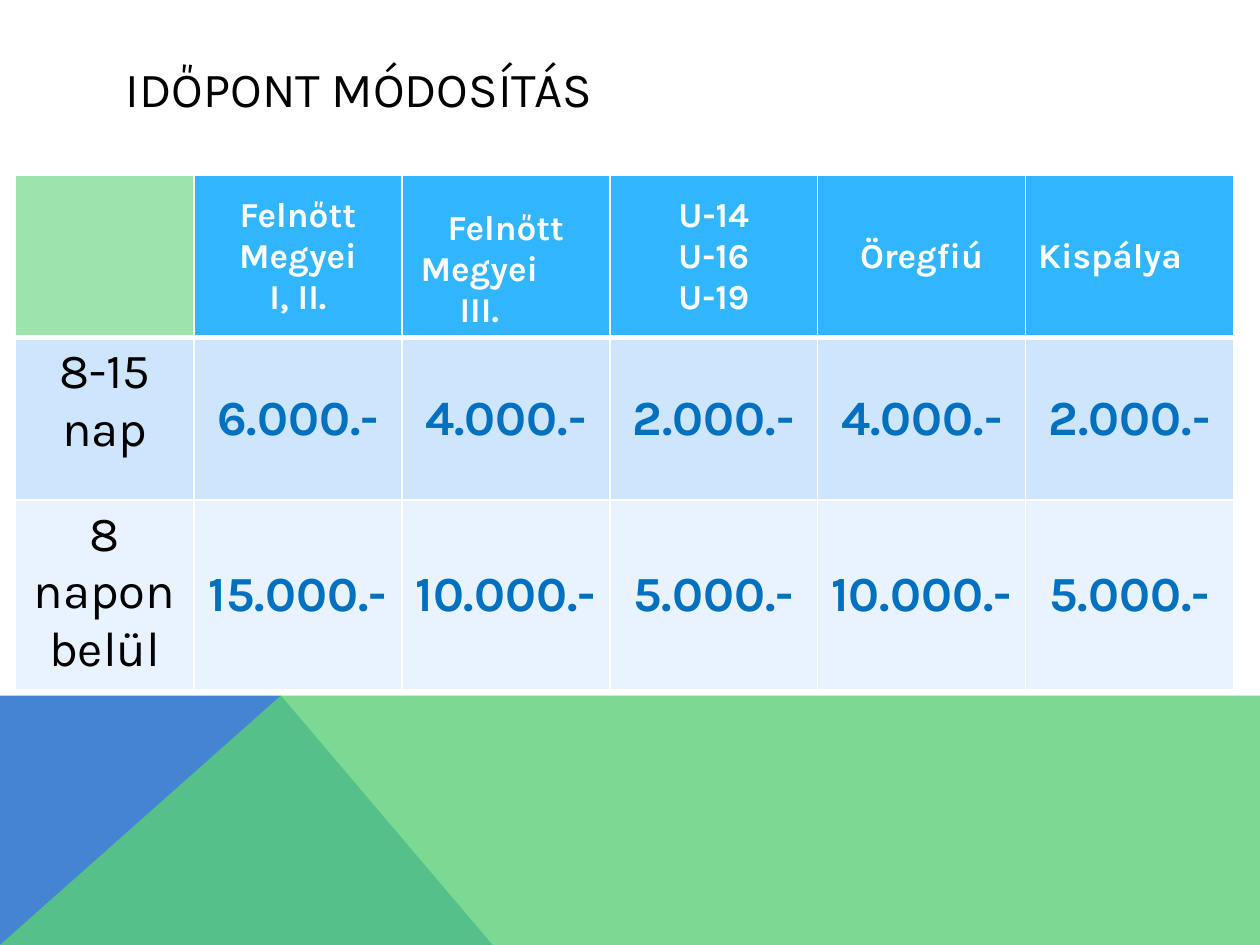
from lxml import etree
from pptx import Presentation
from pptx import util as u
from pptx.dml.color import RGBColor
from pptx.enum import text
from pptx.oxml import ns

Inches = u.Inches
COLORS = {
    "white": "FFFFFF", "black": "000000", "price": "0070C0",
    "corner": "9DE3AE", "header": "31B6FD", "band1": "CEE5FE", "band2": "E8F3FF",
    "blue": "4584D3", "green": "5BD078",
}
CENTER, LEFT = text.PP_ALIGN.CENTER, text.PP_ALIGN.LEFT
TOP, MIDDLE, BOTTOM = text.MSO_ANCHOR.TOP, text.MSO_ANCHOR.MIDDLE, text.MSO_ANCHOR.BOTTOM


def write(tf, content, size=28, color="black", bold=False, align=CENTER):
    """Write each line of content as its own paragraph."""
    for i, line in enumerate(content.split("\n")):
        p = tf.paragraphs[0] if i == 0 else tf.add_paragraph()
        p.alignment = align
        r = p.add_run()
        r.text = line
        r.font.name = "Karla"
        r.font.size = u.Pt(size)
        r.font.bold = bold
        r.font.color.rgb = RGBColor.from_string(COLORS[color])


def add_border(cell, side, width):
    ln = etree.SubElement(cell._tc.get_or_add_tcPr(), ns.qn(f"a:ln{side}"), w=str(u.Pt(width)))
    fill = etree.SubElement(ln, ns.qn("a:solidFill"))
    etree.SubElement(fill, ns.qn("a:srgbClr"), val=COLORS["white"])


prs = Presentation()
prs.slide_width, prs.slide_height = Inches(10), Inches(7.5)
s = prs.slides.add_slide(prs.slide_layouts[6])

# Footer shapes
footer = [
    ("blue", 100, [(0, 7.5), (0, 5.52), (2.23, 5.52), (3.91, 7.5)]),
    ("green", 80, [(0, 7.5), (2.23, 5.52), (10, 5.52), (10, 7.5)]),
]
for color, opacity, points in footer:
    corners = [(Inches(x), Inches(y)) for x, y in points]
    builder = s.shapes.build_freeform(*corners[0])
    builder.add_line_segments(corners[1:], close=True)
    sp = builder.convert_to_shape()
    sp.shadow.inherit = False
    sp.line.fill.background()
    sp.fill.solid()
    sp.fill.fore_color.rgb = RGBColor.from_string(COLORS[color])
    if opacity < 100:
        clr = sp._element.spPr.find(".//" + ns.qn("a:srgbClr"))
        etree.SubElement(clr, ns.qn("a:alpha"), val=str(opacity * 1000))

# Title
title = s.shapes.add_textbox(Inches(0.9), Inches(0.4), Inches(8.22), Inches(0.6))
title.text_frame.word_wrap = True
title.text_frame.vertical_anchor = MIDDLE
write(title.text_frame, "IDŐPONT MÓDOSÍTÁS", align=LEFT)

# Fee table
rows = [
    ["", "Felnőtt\nMegyei\nI, II.", "Felnőtt\nMegyei\nIII.", "U-14\nU-16\nU-19", "Öregfiú", "Kispálya"],
    ["8-15 nap", "6.000.-", "4.000.-", "2.000.-", "4.000.-", "2.000.-"],
    ["8 napon belül", "15.000.-", "10.000.-", "5.000.-", "10.000.-", "5.000.-"],
]
row_fills = ["header", "band1", "band2"]
frame = s.shapes.add_table(3, 6, Inches(0.12), Inches(1.39), Inches(9.67), Inches(3.87))
table = frame.table
for i, column in enumerate(table.columns):
    column.width = Inches(1.65 if i else 1.42)
for row in table.rows:
    row.height = Inches(1.29)

for i, labels in enumerate(rows):
    for j, label in enumerate(labels):
        cell = table.cell(i, j)
        for side in "LRTB":
            under_header = (i, side) in [(0, "B"), (1, "T")]
            add_border(cell, side, 3 if under_header else 1)
        cell.fill.solid()
        fill = "corner" if i == j == 0 else row_fills[i]
        cell.fill.fore_color.rgb = RGBColor.from_string(COLORS[fill])
        cell.vertical_anchor = MIDDLE if j else TOP
        if not label:
            continue
        if i == 0:
            align = LEFT if label == "Kispálya" else CENTER
            write(cell.text_frame, label, size=20, color="white", bold=True, align=align)
        elif j == 0:
            write(cell.text_frame, label)
        else:
            write(cell.text_frame, label, color="price", bold=True)

# The third league header sits low, with its middle line shifted left
league = table.cell(0, 2)
league.vertical_anchor = BOTTOM
league.text_frame.paragraphs[1]._p.get_or_add_pPr().set("marR", str(Inches(0.42)))

prs.save("out.pptx")
